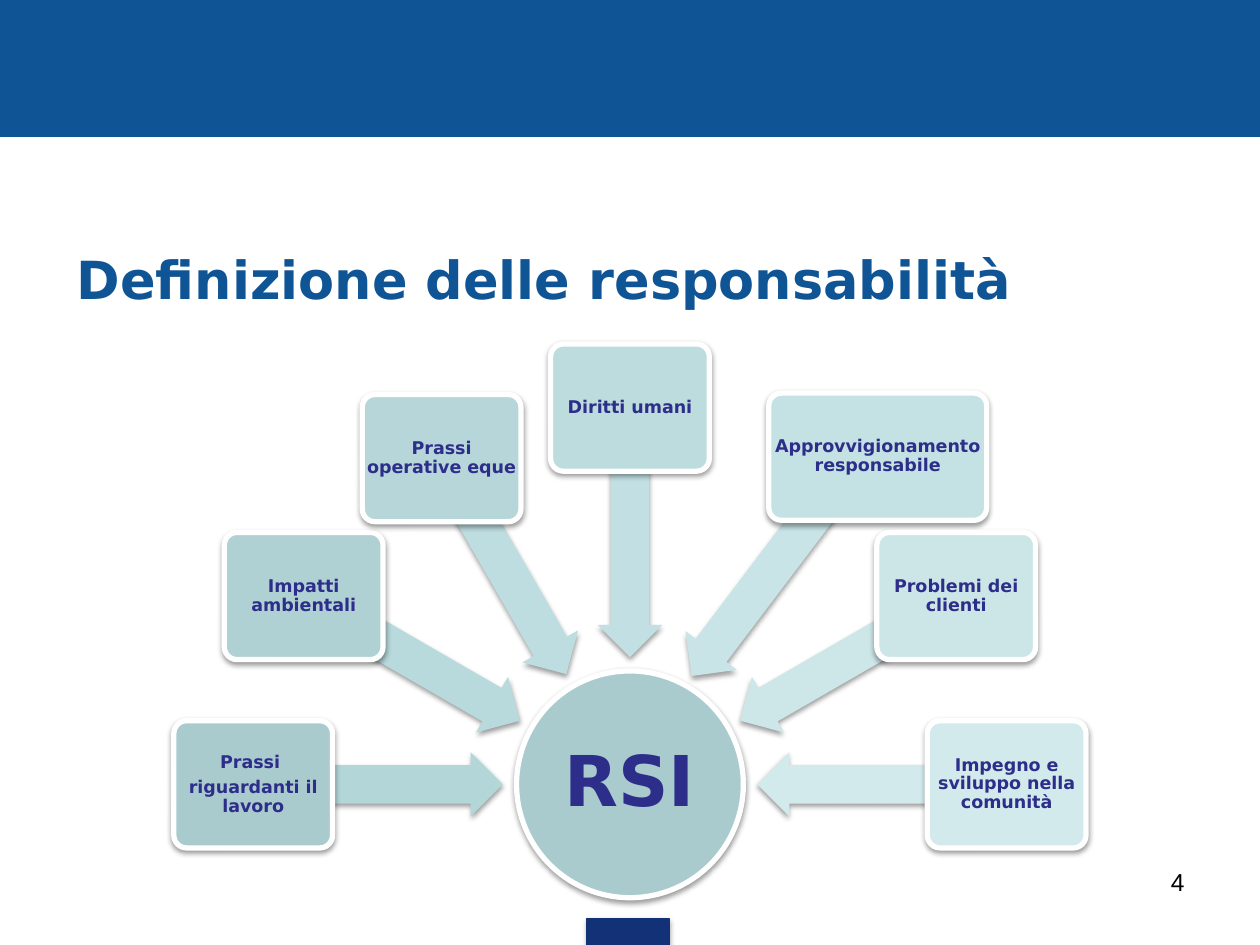
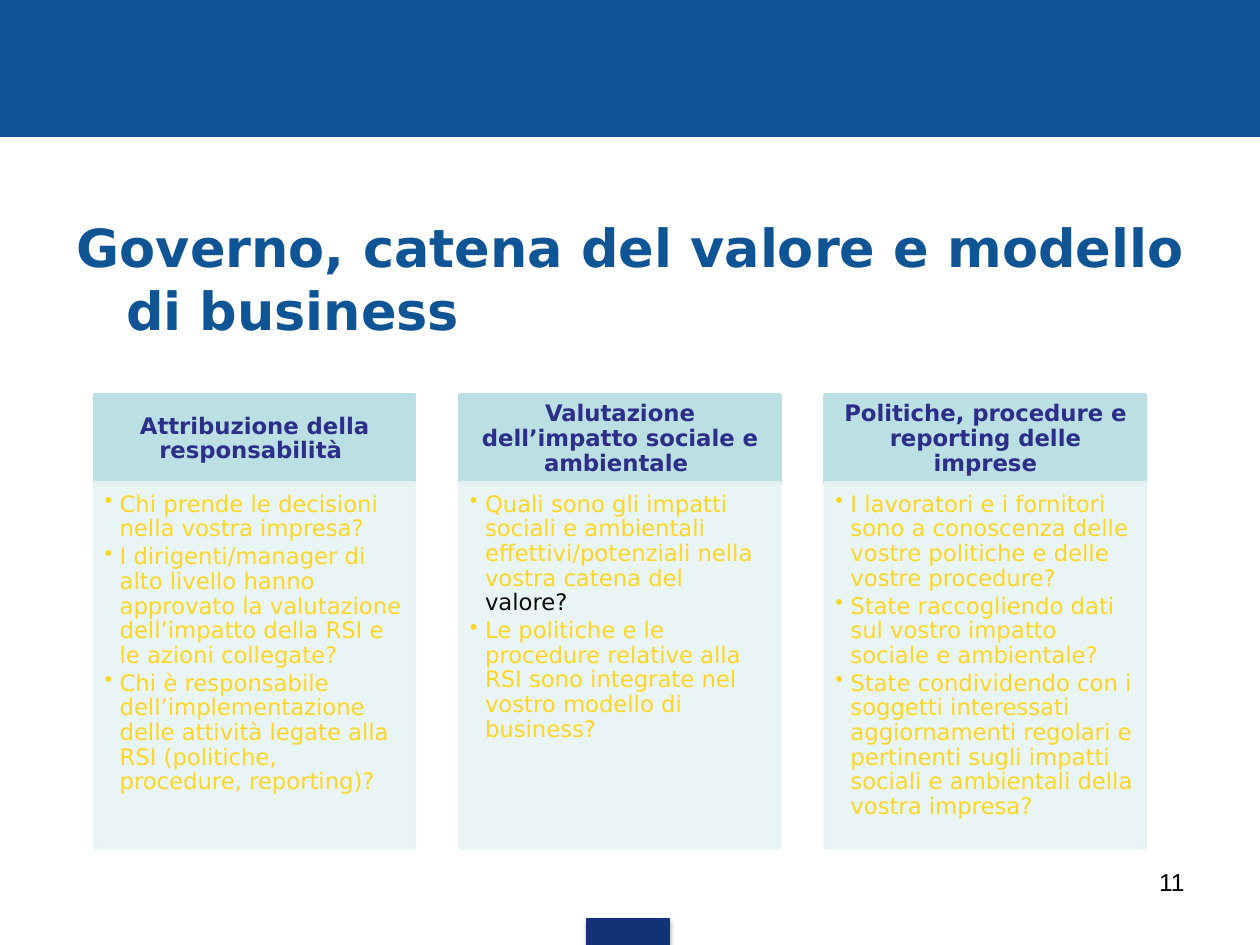
from dataclasses import dataclass
from math import cos, radians, sin

from lxml.etree import SubElement
from pptx import Presentation
from pptx.dml.color import RGBColor
from pptx.enum.shapes import MSO_SHAPE
from pptx.enum.text import MSO_ANCHOR, MSO_AUTO_SIZE, PP_ALIGN
from pptx.oxml.ns import qn
from pptx.util import Inches, Pt

COLS, ROWS = 100, 75
BLUE, NAVY, INDIGO = "0F5494", "133176", "2D2D8A"
WHITE, BLACK, NEAR_BLACK, YELLOW = "FFFFFF", "000000", "0D0D0D", "FFD624"
HUB_FILL, HEAD_FILL, BODY_FILL = "AACBCE", "BBE0E3", "E7F3F4"


def rgb(hex_string):
    return RGBColor.from_string(hex_string)


@dataclass
class Spoke:
    paragraphs: list
    fill: str
    arrow_fill: str
    angle: float
    reach: float = 29.9
    width: float = 12.6
    arrow_angle: float = 0
    arrow_reach: float = 20
    arrow_length: float = 19.8


class Deck:
    font = "DejaVu Sans"

    def __init__(self):
        self.prs = Presentation()
        self.prs.slide_width, self.prs.slide_height = Inches(10), Inches(7.5)
        self.s = None

    def x(self, cols):
        return round(self.prs.slide_width * cols / COLS)

    def y(self, rows):
        return round(self.prs.slide_height * rows / ROWS)

    def box(self, left, top, width, height):
        return self.x(left), self.y(top), self.x(width), self.y(height)

    def slide(self, title, number):
        self.s = self.prs.slides.add_slide(self.prs.slide_layouts[5])
        self.shape(MSO_SHAPE.RECTANGLE, (0, 0, 100, 10.8), BLUE, (BLUE, 0.75))
        tab = self.shape(MSO_SHAPE.RECTANGLE, (46.6, 72.9, 6.5, 2.2), NAVY, (NAVY, 0.75))
        self.shadow(tab, 35, 1.8)
        self.title(title)
        tb = self.s.shapes.add_textbox(*self.box(71.7, 68.3, 23.3, 5.2))
        self.text(tb.text_frame, [number], 14, BLACK, font="Arial",
                  align=PP_ALIGN.RIGHT, anchor=MSO_ANCHOR.TOP)

    def title(self, text):
        sp = self.s.shapes.title
        sp.left, sp.top, sp.width, sp.height = self.box(5.1, 17, 90, 10.2)
        tf = sp.text_frame
        self.text(tf, [text], 30, BLUE, bold=True, align=PP_ALIGN.LEFT, hanging=3.9)
        tf.auto_size = MSO_AUTO_SIZE.NONE

    def shape(self, kind, place, fill, line=None, adjust=(), rotation=0):
        sp = self.s.shapes.add_shape(kind, *self.box(*place))
        sp.shadow.inherit = False
        for i, value in enumerate(adjust):
            sp.adjustments[i] = value
        sp.rotation = rotation
        sp.fill.solid()
        sp.fill.fore_color.rgb = rgb(fill)
        if line:
            sp.line.color.rgb = rgb(line[0])
            sp.line.width = Pt(line[1])
        else:
            sp.line.fill.background()
        return sp

    def shadow(self, sp, alpha=38, distance=1.6):
        effects = sp._element.spPr.find(qn("a:effectLst"))
        outer = SubElement(effects, qn("a:outerShdw"), blurRad=str(Pt(3.1)),
                           dist=str(Pt(distance)), dir="5400000", rotWithShape="0")
        color = SubElement(outer, qn("a:srgbClr"), val=BLACK)
        SubElement(color, qn("a:alpha"), val=str(alpha * 1000))

    def opacity(self, sp, percent):
        for color in sp._element.spPr.iter(qn("a:srgbClr")):
            SubElement(color, qn("a:alpha"), val=str(percent * 1000))

    def text(self, tf, paragraphs, size, color, bold=False, font=None, align=PP_ALIGN.CENTER,
             anchor=MSO_ANCHOR.MIDDLE, insets=None, spacing=None, after=0, hanging=0, bullet=None):
        tf.word_wrap = True
        tf.vertical_anchor = anchor
        if insets:
            left, top, right, bottom = insets
            tf.margin_left, tf.margin_right = self.x(left), self.x(right)
            tf.margin_top, tf.margin_bottom = self.y(top), self.y(bottom)
        for i, runs in enumerate(paragraphs):
            p = tf.add_paragraph() if i else tf.paragraphs[0]
            p.alignment = align
            pPr = p._p.get_or_add_pPr()
            if hanging:
                pPr.set("marL", str(self.x(hanging)))
                pPr.set("indent", str(-self.x(hanging)))
            if bullet:
                SubElement(pPr, qn("a:buChar"), char=bullet)
            if spacing:
                p.line_spacing = spacing
            p.space_after = Pt(size * after)
            for run in [(runs, color)] if isinstance(runs, str) else runs:
                r = p.add_run()
                r.text = run[0]
                r.font.name = font or self.font
                r.font.size = Pt(size)
                r.font.bold = bold
                r.font.color.rgb = rgb(run[1])

    def node(self, kind, place, fill, paragraphs, size, inset, adjust=()):
        sp = self.shape(kind, place, fill, (WHITE, 3), adjust)
        self.shadow(sp)
        self.text(sp.text_frame, paragraphs, size, INDIGO, bold=True,
                  insets=(inset,) * 4, spacing=0.9, after=0.35)

    def hub(self, cx, cy, diameter, label):
        place = (cx - diameter / 2, cy - diameter / 2, diameter, diameter)
        self.node(MSO_SHAPE.OVAL, place, HUB_FILL, [label], 40, 0.3)

    def spoke(self, cx, cy, spoke):
        def around(angle, reach, width, height):
            a = radians(angle)
            return (cx + reach * cos(a) - width / 2, cy + reach * sin(a) - height / 2,
                    width, height)

        place = around(spoke.arrow_angle or spoke.angle, spoke.arrow_reach,
                       spoke.arrow_length, 5.1)
        arrow = self.shape(MSO_SHAPE.LEFT_ARROW, place, spoke.arrow_fill,
                           adjust=(0.6, 0.5), rotation=spoke.angle % 360)
        self.shadow(arrow)
        place = around(spoke.angle, spoke.reach, spoke.width, 10.1)
        self.node(MSO_SHAPE.ROUNDED_RECTANGLE, place, spoke.fill, spoke.paragraphs,
                  10, 0.1, (0.1,))

    def column(self, left, heading, questions):
        head = self.shape(MSO_SHAPE.RECTANGLE, (left, 31.3, 25.4, 7.1), HEAD_FILL, (HEAD_FILL, 2))
        self.text(head.text_frame, [heading], 13, INDIGO, bold=True,
                  insets=(1, 0.6, 1, 0.6), spacing=0.9, after=0.35)
        body = self.shape(MSO_SHAPE.RECTANGLE, (left, 38.3, 25.4, 29), BODY_FILL, (BODY_FILL, 2))
        self.opacity(body, 90)
        self.text(body.text_frame, questions, 13, YELLOW, align=PP_ALIGN.LEFT,
                  anchor=MSO_ANCHOR.TOP, insets=(0.8, 0.8, 1, 1.1), spacing=0.9,
                  after=0.15, hanging=1.2, bullet="•")


SPOKES = [
    Spoke(["Prassi ", "riguardanti il lavoro"], "AACBCE", "B3D6D9", 180),
    Spoke(["Impatti ambientali"], "B0D1D4", "B8DADC", 210),
    Spoke(["Prassi operative eque"], "B6D6D9", "BDDDE0", 240),
    Spoke(["Diritti umani"], "BDDCDE", "C2E0E3", 270),
    Spoke(["Approvvigionamento responsabile"], "C4E1E3", "C8E4E6", 307.1,
          reach=32.6, width=17.3, arrow_angle=303.6, arrow_reach=21, arrow_length=22.3),
    Spoke(["Problemi dei clienti"], "CCE6E8", "CDE7E9", 330),
    Spoke(["Impegno e sviluppo nella comunità"], "D3EAEC", "D3EAEC", 360),
]

COLUMNS = [
    ("Attribuzione della responsabilità ", [
        "Chi prende le decisioni nella vostra impresa?",
        "I dirigenti/manager di alto livello hanno approvato la valutazione "
        "dell’impatto della RSI e le azioni collegate?",
        "Chi è responsabile dell’implementazione delle attività legate alla RSI "
        "(politiche, procedure, reporting)?",
    ]),
    ("Valutazione dell’impatto sociale e ambientale ", [
        [("Quali sono gli impatti sociali e ambientali effettivi/potenziali "
          "nella vostra catena del ", YELLOW), ("valore?", NEAR_BLACK)],
        "Le politiche e le procedure relative alla RSI sono integrate nel vostro "
        "modello di business?",
    ]),
    ("Politiche, procedure e reporting delle imprese", [
        "I lavoratori e i fornitori sono a conoscenza delle vostre politiche e delle "
        "vostre procedure?",
        "State raccogliendo dati sul vostro impatto sociale e ambientale?",
        "State condividendo con i soggetti interessati aggiornamenti regolari e "
        "pertinenti sugli impatti sociali e ambientali della vostra impresa?",
    ]),
]


def main():
    deck = Deck()
    deck.slide("Definizione delle responsabilità", "4")
    cx, cy = 50, 62.25
    deck.hub(cx, cy, 18, "RSI ")
    for spoke in SPOKES:
        deck.spoke(cx, cy, spoke)

    deck.slide("Governo, catena del valore e modello di business", "11")
    for i, (heading, questions) in enumerate(COLUMNS):
        deck.column(7.5 + 29 * i, heading, questions)
    deck.prs.save("out.pptx")


if __name__ == "__main__":
    main()
